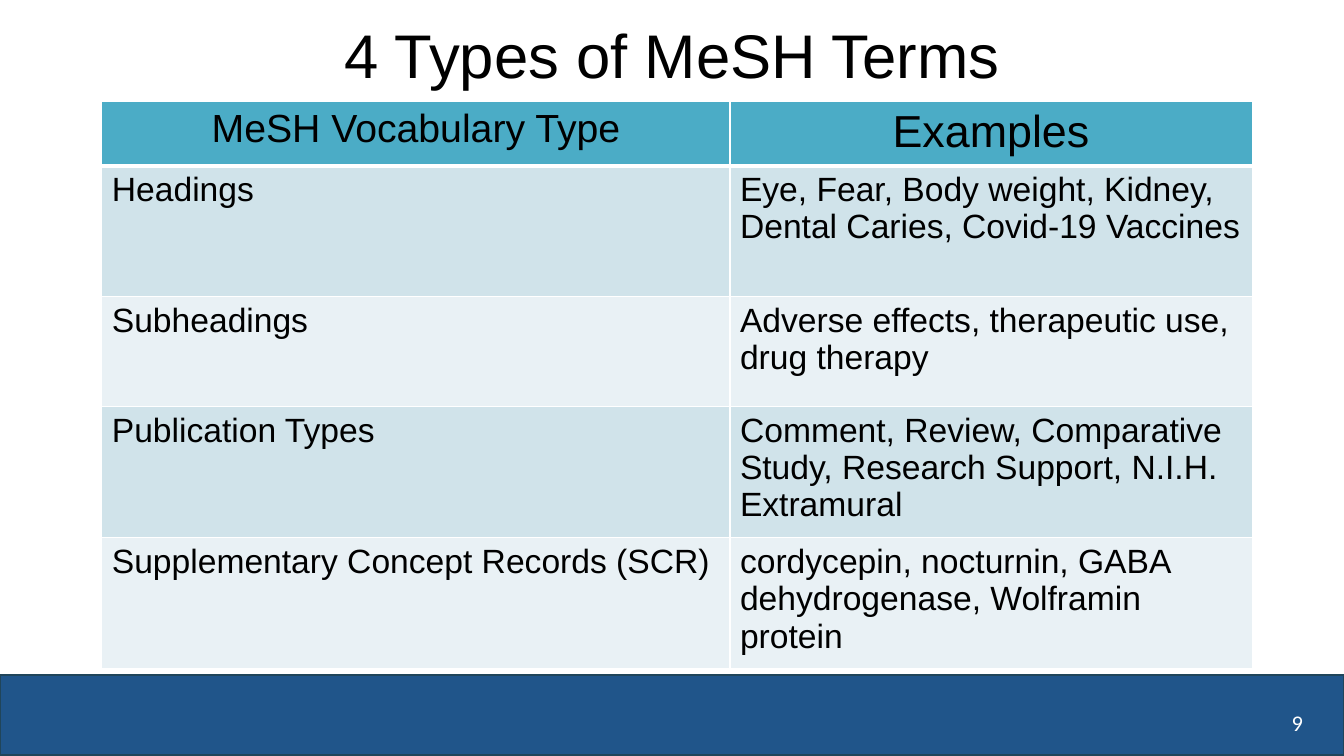
from dataclasses import dataclass

from lxml import etree
from pptx import Presentation
from pptx.dml.color import RGBColor
from pptx.enum.shapes import MSO_SHAPE
from pptx.enum.text import MSO_ANCHOR, PP_ALIGN
from pptx.oxml.ns import qn
from pptx.util import Inches, Pt

LEFT, CENTER, RIGHT = PP_ALIGN.LEFT, PP_ALIGN.CENTER, PP_ALIGN.RIGHT
MIDDLE = MSO_ANCHOR.MIDDLE
RECTANGLE = MSO_SHAPE.RECTANGLE
TITLE_ONLY = 5


@dataclass(frozen=True)
class Theme:
    text: str = "000000"
    white: str = "FFFFFF"
    header: str = "4BACC6"
    bands: tuple = ("D0E3EA", "E9F1F5")
    footer: str = "20558A"
    footer_edge: str = "20455A"
    body_font: str = "Arial"
    number_font: str = "Calibri"
    title_size: int = 44
    header_sizes: tuple = (28, 32)
    body_size: int = 24
    number_size: int = 16


THEME = Theme()
COLUMN_WIDTHS = (6.23, 5.18)
ROW_HEIGHTS = (0.63, 1.3, 1.09, 1.09, 1.09)
HEADINGS = ("MeSH Vocabulary Type", "Examples")
TERM_TYPES = (
    ("Headings", "Eye, Fear, Body weight, Kidney, Dental Caries, Covid-19 Vaccines"),
    ("Subheadings", "Adverse effects, therapeutic use, drug therapy"),
    ("Publication Types",
     "Comment, Review, Comparative\nStudy, Research Support, N.I.H. Extramural"),
    ("Supplementary Concept Records (SCR)",
     "cordycepin, nocturnin, GABA dehydrogenase, Wolframin protein"),
)


def write(frame, text, size, align=LEFT, color=THEME.text, font=THEME.body_font):
    frame.text = text
    font_format = {"size": Pt(size), "name": font, "bold": False}
    for paragraph in frame.paragraphs:
        paragraph.alignment = align
        for run in paragraph.runs:
            for key, value in font_format.items():
                setattr(run.font, key, value)
            run.font.color.rgb = RGBColor.from_string(color)


def place(shape, box):
    for side, length in zip(("left", "top", "width", "height"), box):
        setattr(shape, side, Inches(length))


def add_title(slide, box):
    title = slide.shapes.title
    place(title, box)
    write(title.text_frame, "4 Types of MeSH Terms", THEME.title_size, CENTER)
    title.text_frame.vertical_anchor = MIDDLE
    title.text_frame.paragraphs[0].line_spacing = 0.9


def style_cell(cell, fill, bottom_width):
    """Draw white borders around the cell, then fill it."""
    properties = cell._tc.get_or_add_tcPr()
    for side, width in {"L": 1, "R": 1, "T": 1, "B": bottom_width}.items():
        line = etree.SubElement(properties, qn(f"a:ln{side}"), w=str(Pt(width)))
        solid = etree.SubElement(line, qn("a:solidFill"))
        etree.SubElement(solid, qn("a:srgbClr"), val=THEME.white)
    cell.fill.solid()
    cell.fill.fore_color.rgb = RGBColor.from_string(fill)


def add_term_table(slide, box):
    rows = (HEADINGS, *TERM_TYPES)
    table = slide.shapes.add_table(
        len(rows), len(HEADINGS), *map(Inches, box)).table
    for column, width in zip(table.columns, COLUMN_WIDTHS):
        column.width = Inches(width)
    for row, height in zip(table.rows, ROW_HEIGHTS):
        row.height = Inches(height)
    for r, texts in enumerate(rows):
        is_header = r == 0
        fill = THEME.header if is_header else THEME.bands[(r - 1) % 2]
        for c, text in enumerate(texts):
            cell = table.cell(r, c)
            style_cell(cell, fill, 3 if is_header else 1)
            size = THEME.header_sizes[c] if is_header else THEME.body_size
            write(cell.text_frame, text, size, CENTER if is_header else LEFT)


def add_footer(slide, box):
    left, top, width, _ = box
    band = slide.shapes.add_shape(RECTANGLE, *map(Inches, box))
    band.shadow.inherit = False
    band.fill.solid()
    band.fill.fore_color.rgb = RGBColor.from_string(THEME.footer)
    band.line.color.rgb = RGBColor.from_string(THEME.footer_edge)
    band.line.width = Pt(1.5)

    number_box = (left + width - 1.52, top + 0.27, 1.21, 0.4)
    number = slide.shapes.add_textbox(*map(Inches, number_box)).text_frame
    number.word_wrap = True
    number.vertical_anchor = MIDDLE
    write(number, "9", THEME.number_size, RIGHT, THEME.white, THEME.number_font)


def main():
    deck = Presentation()
    deck.slide_width, deck.slide_height = Inches(13.33), Inches(7.5)
    slide = deck.slides.add_slide(deck.slide_layouts[TITLE_ONLY])
    add_footer(slide, (0, 6.7, 13.33, 0.79))
    add_title(slide, (0.92, 0.15, 11.5, 0.87))
    add_term_table(slide, (1.01, 1.01, sum(COLUMN_WIDTHS), sum(ROW_HEIGHTS)))
    deck.save("out.pptx")


if __name__ == "__main__":
    main()
